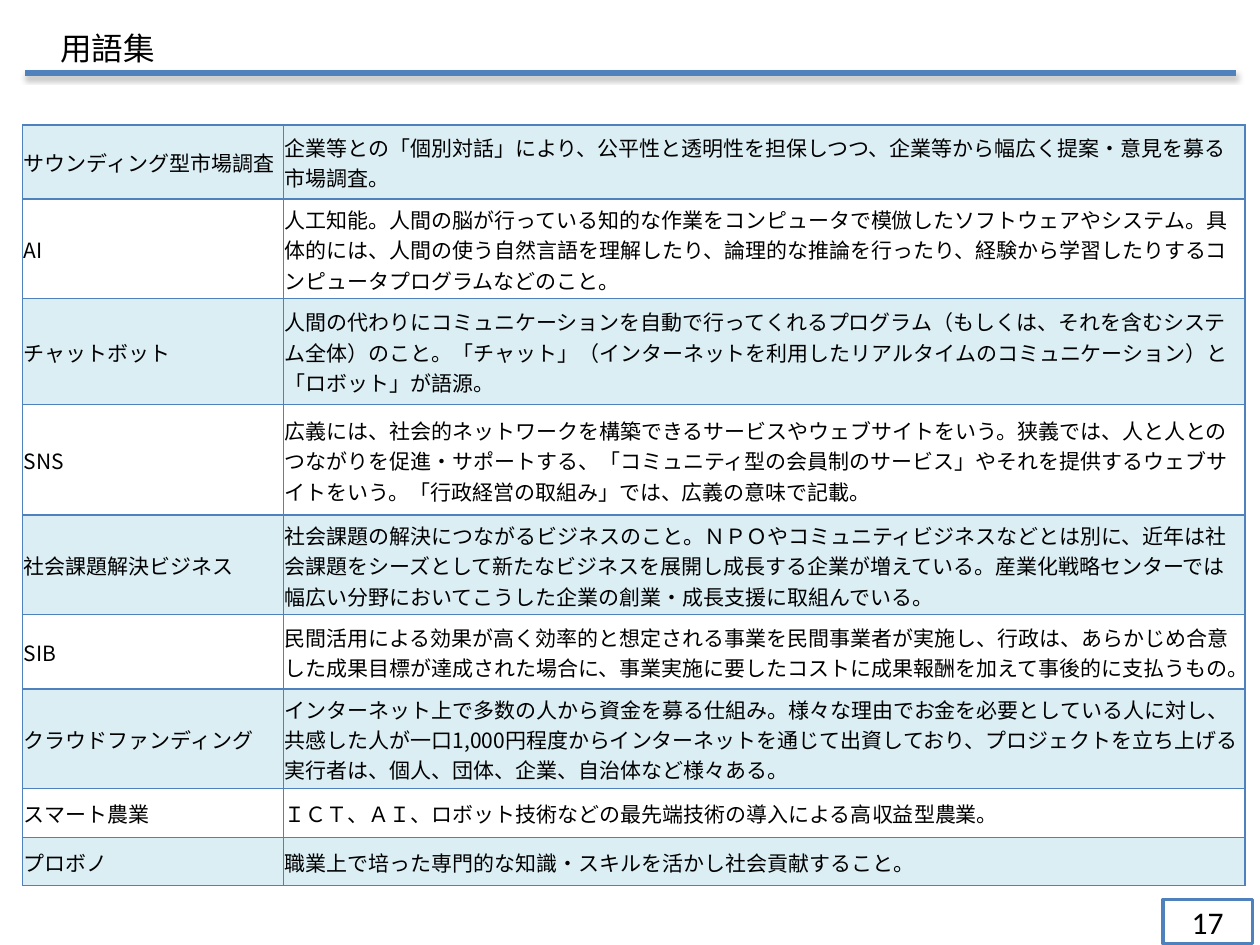
from dataclasses import dataclass

import lxml.etree
import pptx
import pptx.dml.color
import pptx.enum.shapes
import pptx.enum.text
import pptx.oxml
import pptx.oxml.ns
import pptx.util

WIDTH, HEIGHT = pptx.util.Inches(10), pptx.util.Inches(7.5)
JAPANESE, LATIN = "Noto Sans CJK JP", "Calibri"
BLUE, PALE, WHITE, BLACK = "4F81BD", "DBEEF4", "FFFFFF", "000000"
COLUMN_SHARES = (20.7, 76.3)
ANCHOR = pptx.enum.text.MSO_ANCHOR
ALIGN = pptx.enum.text.PP_ALIGN


@dataclass
class Entry:
    term: str
    meaning: str
    height: float  # percent of the slide height


ENTRIES = [
    Entry("サウンディング型市場調査",
          "企業等との「個別対話」により、公平性と透明性を担保しつつ、企業等から幅広く提案・意見を募る"
          "市場調査。", 7.87),
    Entry("AI",
          "人工知能。人間の脳が行っている知的な作業をコンピュータで模倣したソフトウェアやシステム。具"
          "体的には、人間の使う自然言語を理解したり、論理的な推論を行ったり、経験から学習したりするコ"
          "ンピュータプログラムなどのこと。", 10.53),
    Entry("チャットボット",
          "人間の代わりにコミュニケーションを自動で行ってくれるプログラム（もしくは、それを含むシステ"
          "ム全体）のこと。「チャット」（インターネットを利用したリアルタイムのコミュニケーション）と"
          "「ロボット」が語源。", 11.2),
    Entry("SNS",
          "広義には、社会的ネットワークを構築できるサービスやウェブサイトをいう。狭義では、人と人との"
          "つながりを促進・サポートする、「コミュニティ型の会員制のサービス」やそれを提供するウェブサ"
          "イトをいう。「行政経営の取組み」では、広義の意味で記載。", 11.73),
    Entry("社会課題解決ビジネス",
          "社会課題の解決につながるビジネスのこと。ＮＰＯやコミュニティビジネスなどとは別に、近年は社"
          "会課題をシーズとして新たなビジネスを展開し成長する企業が増えている。産業化戦略センターでは"
          "幅広い分野においてこうした企業の創業・成長支援に取組んでいる。", 10.53),
    Entry("SIB",
          "民間活用による効果が高く効率的と想定される事業を民間事業者が実施し、行政は、あらかじめ合意"
          "した成果目標が達成された場合に、事業実施に要したコストに成果報酬を加えて事後的に支払うもの。",
          7.87),
    Entry("クラウドファンディング",
          "インターネット上で多数の人から資金を募る仕組み。様々な理由でお金を必要としている人に対し、"
          "共感した人が一口1,000円程度からインターネットを通じて出資しており、プロジェクトを立ち上げ"
          "る実行者は、個人、団体、企業、自治体など様々ある。", 10.53),
    Entry("スマート農業", "ＩＣＴ、ＡＩ、ロボット技術などの最先端技術の導入による高収益型農業。", 5.2),
    Entry("プロボノ", "職業上で培った専門的な知識・スキルを活かし社会貢献すること。", 5.07),
]


def across(percent: float) -> int:
    return round(WIDTH * percent / 100)


def down(percent: float) -> int:
    return round(HEIGHT * percent / 100)


def colour(value: str) -> pptx.dml.color.RGBColor:
    return pptx.dml.color.RGBColor.from_string(value)


def paint(fill, value: str) -> None:
    fill.solid()
    fill.fore_color.rgb = colour(value)


def write(text_frame, text: str, size: float, font: str, alignment=ALIGN.LEFT) -> None:
    text_frame.text = text
    paragraph = text_frame.paragraphs[0]
    paragraph.alignment = alignment
    run = paragraph.runs[0]
    run.font.size = pptx.util.Pt(size)
    run.font.name = font
    run.font.color.rgb = colour(BLACK)
    east_asian = lxml.etree.SubElement(run.font._element, pptx.oxml.ns.qn("a:ea"))
    east_asian.set("typeface", font)


def add_borders(cell, value: str, points: float) -> None:
    properties = cell._tc.get_or_add_tcPr()
    for side in "LRTB":
        properties.append(pptx.oxml.parse_xml(
            f'<a:ln{side} {pptx.oxml.ns.nsdecls("a")} w="{pptx.util.Pt(points)}">'
            f'<a:solidFill><a:srgbClr val="{value}"/></a:solidFill></a:ln{side}>'))


def add_title(slide, text: str) -> None:
    title = slide.shapes.title
    title.left, title.top = across(3.8), down(2.4)
    title.width, title.height = across(84), down(5.33)
    frame = title.text_frame
    frame.word_wrap = True
    frame.auto_size = pptx.enum.text.MSO_AUTO_SIZE.NONE
    frame.vertical_anchor = ANCHOR.TOP
    write(frame, text, 18, JAPANESE)


def add_rule(slide) -> None:
    rule = slide.shapes.add_connector(
        pptx.enum.shapes.MSO_CONNECTOR.STRAIGHT,
        across(2), down(7.73), across(98.1), down(7.73))
    rule.line.color.rgb = colour(BLUE)
    rule.line.width = pptx.util.Pt(3)
    rule._element.spPr.append(pptx.oxml.parse_xml(
        f'<a:effectLst {pptx.oxml.ns.nsdecls("a")}>'
        f'<a:outerShdw blurRad="{pptx.util.Pt(3.1)}" dist="{pptx.util.Pt(1.8)}" '
        f'dir="5400000" rotWithShape="0"><a:srgbClr val="{BLACK}">'
        '<a:alpha val="35000"/></a:srgbClr></a:outerShdw></a:effectLst>'))


def add_glossary(slide, entries: list[Entry]) -> None:
    table = slide.shapes.add_table(
        len(entries), len(COLUMN_SHARES), across(1.8), down(13.2),
        across(sum(COLUMN_SHARES)), down(sum(entry.height for entry in entries))).table
    for column, share in zip(table.columns, COLUMN_SHARES):
        column.width = across(share)
    for index, (row, entry) in enumerate(zip(table.rows, entries)):
        row.height = down(entry.height)
        for cell, text in zip(row.cells, (entry.term, entry.meaning)):
            cell.margin_left = cell.margin_right = cell.margin_top = pptx.util.Inches(0.01)
            cell.margin_bottom = 0
            cell.vertical_anchor = ANCHOR.MIDDLE
            write(cell.text_frame, text, 12, JAPANESE)
            add_borders(cell, BLUE, 1)
            paint(cell.fill, WHITE if index % 2 else PALE)


def add_page_number(slide, number: str) -> None:
    box = slide.shapes.add_shape(
        pptx.enum.shapes.MSO_SHAPE.RECTANGLE,
        across(92.3), down(95.2), across(7.1), down(4.67))
    box.shadow.inherit = False
    paint(box.fill, WHITE)
    box.line.color.rgb = colour(BLUE)
    box.line.width = pptx.util.Pt(2)
    frame = box.text_frame
    frame.margin_left = frame.margin_right = pptx.util.Inches(0.08)
    frame.margin_top = frame.margin_bottom = pptx.util.Inches(0.08)
    frame.vertical_anchor = ANCHOR.MIDDLE
    write(frame, number, 18, LATIN, ALIGN.CENTER)


def main() -> None:
    presentation = pptx.Presentation()
    presentation.slide_width, presentation.slide_height = WIDTH, HEIGHT
    slide = presentation.slides.add_slide(presentation.slide_layouts.get_by_name("Title Only"))
    paint(slide.background.fill, WHITE)

    # Table and page number
    add_glossary(slide, ENTRIES)
    add_page_number(slide, "17")

    # Heading with its rule
    add_rule(slide)
    add_title(slide, "用語集")

    presentation.save("out.pptx")


if __name__ == "__main__":
    main()
